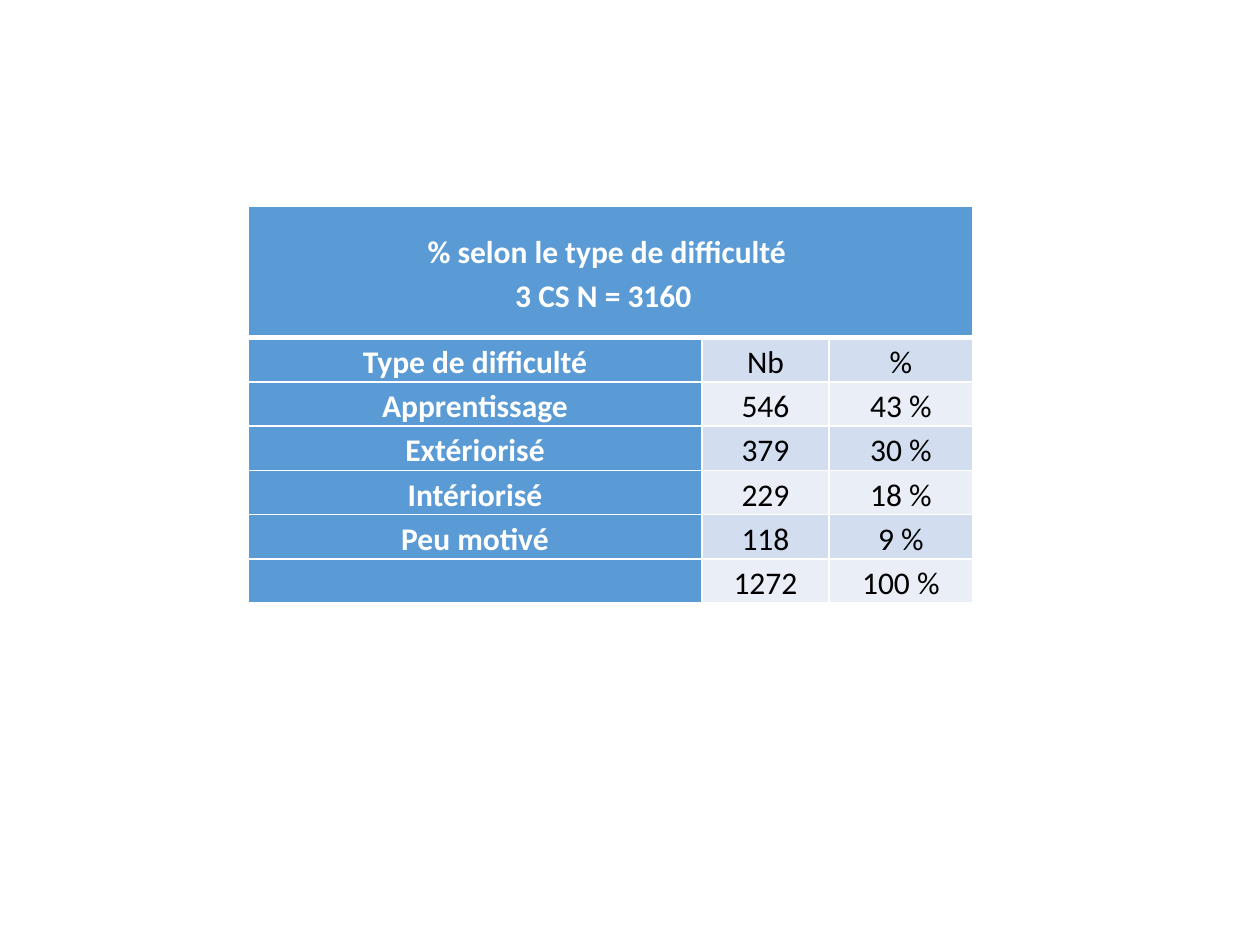
from lxml import etree
from pptx import Presentation
from pptx import util as u
from pptx.dml.color import RGBColor
from pptx.enum import text
from pptx.oxml.ns import qn

HUES = {"head": "5B9BD5", "odd": "D2DEEF", "even": "EAEFF7",
        "light": "FFFFFF", "dark": "000000"}
TITLE = "% selon le type de difficulté \v3 CS N = 3160  "
ROWS = [
    (TITLE, "", ""),
    ("Type de difficulté", "Nb", "%"),
    ("Apprentissage", "546", "43 %"),
    ("Extériorisé", "379", "30 %"),
    ("Intériorisé", "229", "18 %"),
    ("Peu motivé", "118", "9 %"),
    ("", "1272", "100 %"),
]
COLS = [3.6, 1.01, 1.14]
TALL, LOW = 1.04, 0.345
CELL = {"margin_left": u.Inches(0.05), "margin_right": u.Inches(0.05),
        "margin_top": 0, "margin_bottom": 0,
        "vertical_anchor": text.MSO_ANCHOR.MIDDLE}
PARA = {"alignment": text.PP_ALIGN.CENTER, "line_spacing": 1.15}


def apply(item, values):
    for name, value in values.items():
        setattr(item, name, value)


def color(name):
    return RGBColor.from_string(HUES[name])


def add_edges(cell, row):
    """Draw white cell borders, with a thick rule under the title row."""
    props = cell._tc.get_or_add_tcPr()
    thick = {(0, "B"), (1, "T")}
    for side in "LRTB":
        width = u.Pt(3 if (row, side) in thick else 1)
        line = etree.SubElement(props, qn("a:ln" + side), w=str(int(width)))
        fill = etree.SubElement(line, qn("a:solidFill"))
        etree.SubElement(fill, qn("a:srgbClr"), val=HUES["light"])


def fill_cell(cell, words, row, col):
    head = row == 0 or col == 0
    apply(cell, CELL)
    add_edges(cell, row)
    cell.fill.solid()
    cell.fill.fore_color.rgb = color(
        "head" if head else "odd" if row % 2 else "even")
    cell.text = words
    para = cell.text_frame.paragraphs[0]
    apply(para, PARA)
    for run in para.runs:
        apply(run.font, {"name": "Calibri", "size": u.Pt(18), "bold": head})
        run.font.color.rgb = color("light" if head else "dark")


def add_grid(slide):
    high = TALL + LOW * (len(ROWS) - 1)
    table = slide.shapes.add_table(
        len(ROWS), len(COLS), u.Inches(1.97), u.Inches(1.64),
        u.Inches(sum(COLS)), u.Inches(high)).table
    table.first_col = True
    for column, width in zip(table.columns, COLS):
        column.width = u.Inches(width)
    for row, values in enumerate(ROWS):
        table.rows[row].height = u.Inches(LOW if row else TALL)
        for col, words in enumerate(values):
            fill_cell(table.cell(row, col), words, row, col)
    table.cell(0, 0).merge(table.cell(0, len(COLS) - 1))


def main():
    deck = Presentation()
    apply(deck, {"slide_width": u.Inches(10), "slide_height": u.Inches(7.5)})
    add_grid(deck.slides.add_slide(deck.slide_layouts[6]))
    deck.save("out.pptx")


if __name__ == "__main__":
    main()
